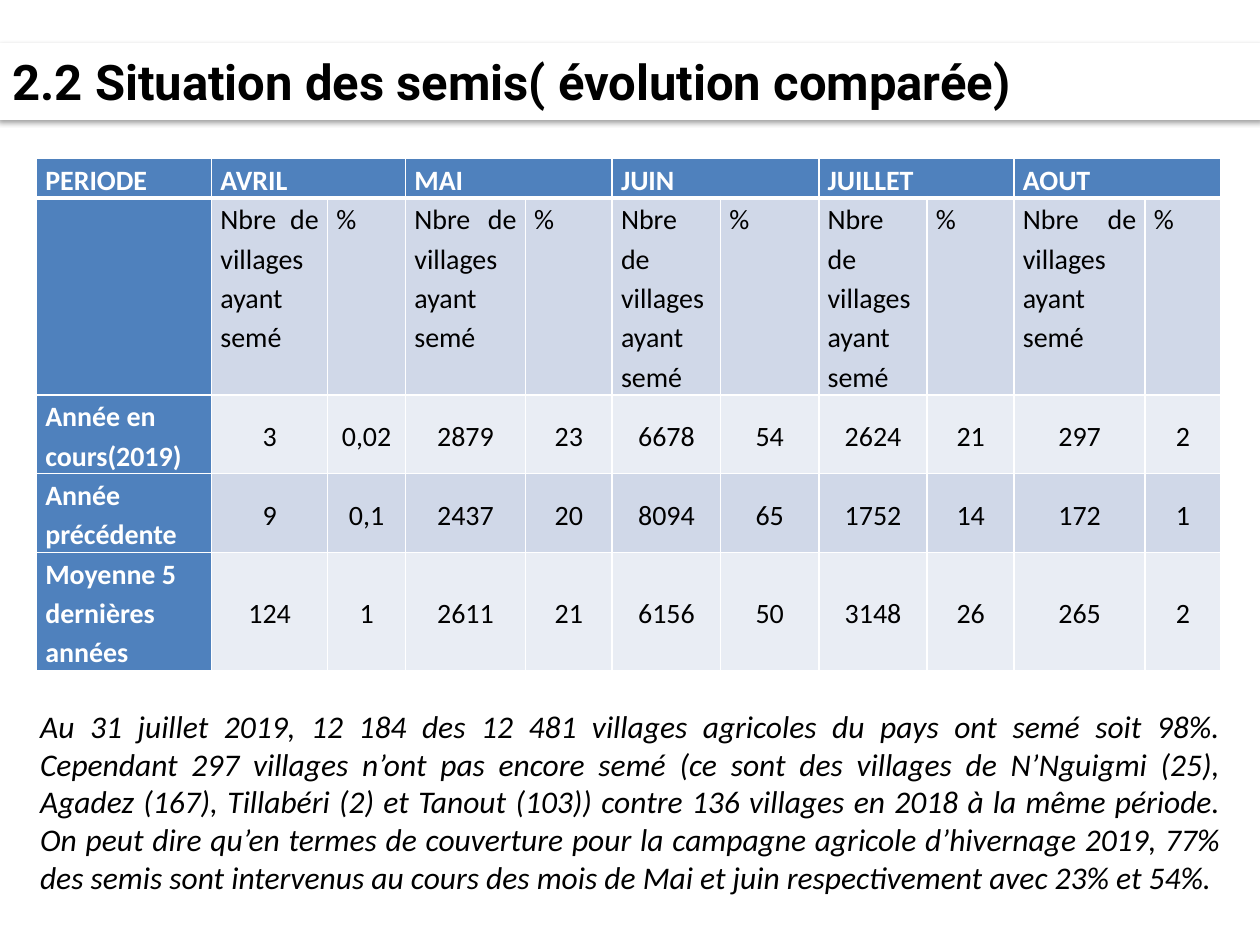
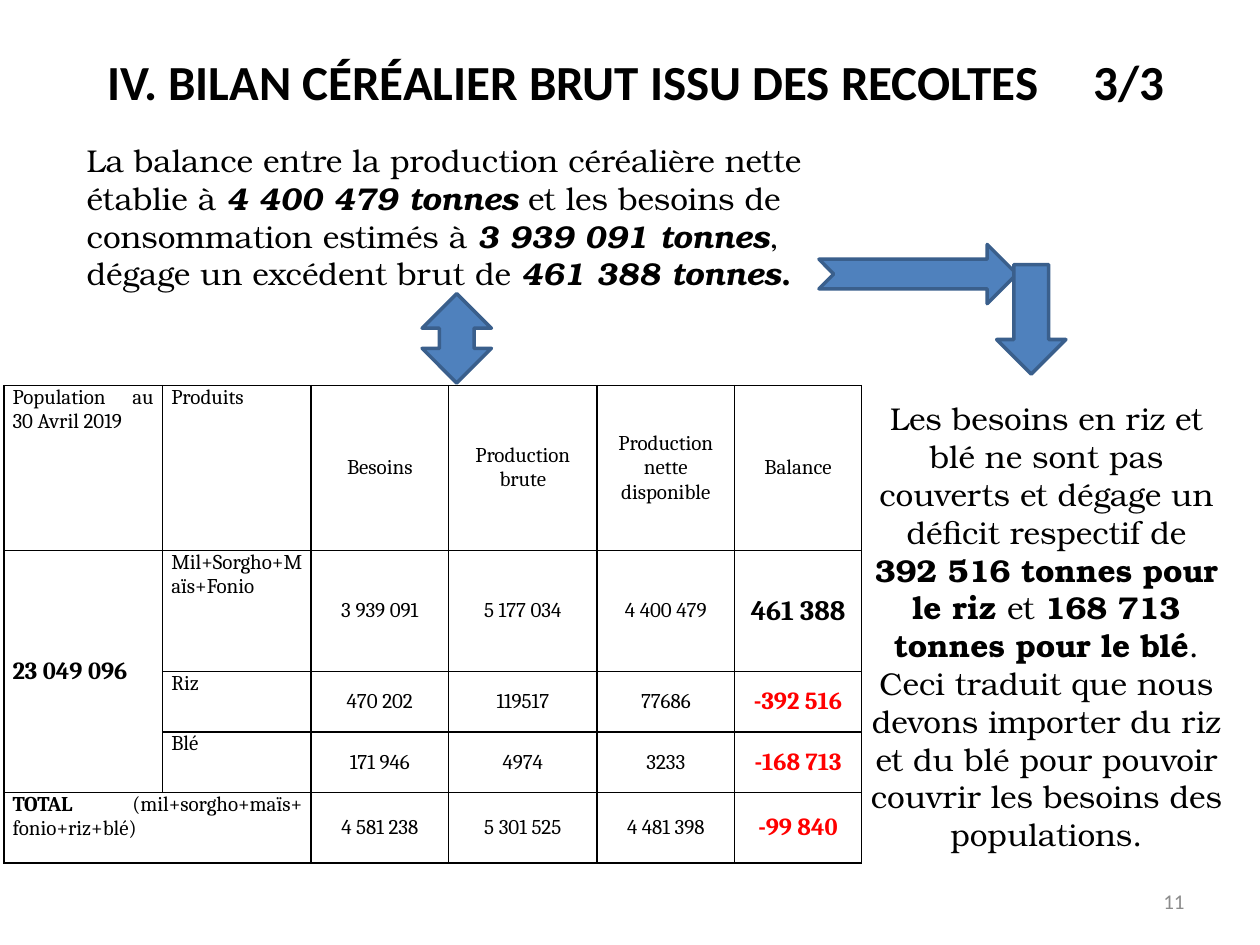
from lxml import etree
from pptx import Presentation
from pptx.dml.color import RGBColor
from pptx.enum import shapes, text
from pptx.oxml import parse_xml
from pptx.oxml.ns import nsdecls, qn
from pptx.util import Inches, Pt

COLORS = {
    "black": "000000", "white": "FFFFFF", "red": "FF0000", "grey": "8C8C8C",
    "blue": "4F81BD", "outline": "3A5F8C", "band": "D0D8E8", "pale": "E9EDF4",
}
LEFT, CENTER = text.PP_ALIGN.LEFT, text.PP_ALIGN.CENTER
JUSTIFY, RIGHT = text.PP_ALIGN.JUSTIFY, text.PP_ALIGN.RIGHT
TOP, MIDDLE = text.MSO_ANCHOR.TOP, text.MSO_ANCHOR.MIDDLE
SERIF = "TeX Gyre Bonum"


def write(frame, pieces, size, font, color="black", align=LEFT, anchor=TOP):
    """Fill a frame with (text, style) pieces; style holds b for bold, i for italic."""
    frame.word_wrap = True
    frame.vertical_anchor = anchor
    paragraph = frame.paragraphs[0]
    paragraph.alignment = align
    for words, style in pieces:
        run = paragraph.add_run()
        run.text = words
        run.font.size = Pt(size)
        run.font.name = font
        run.font.bold = "b" in style
        run.font.italic = "i" in style
        run.font.color.rgb = RGBColor.from_string(COLORS[color])
    return paragraph


def frame_cell(cell, fill, border, top=1, bottom=1):
    """Set margins, fill (None for clear) and the four borders, widths in points."""
    cell.margin_left = cell.margin_right = Inches(0.07)
    cell.margin_top = cell.margin_bottom = 0
    if fill:
        cell.fill.solid()
        cell.fill.fore_color.rgb = RGBColor.from_string(COLORS[fill])
    else:
        cell.fill.background()
    properties = cell._tc.get_or_add_tcPr()
    sides = (("lnL", 1), ("lnR", 1), ("lnT", top), ("lnB", bottom))
    for place, (side, width) in enumerate(sides):
        properties.insert(place, parse_xml(
            f'<a:{side} {nsdecls("a")} w="{Pt(width)}"><a:solidFill>'
            f'<a:srgbClr val="{COLORS[border]}"/></a:solidFill></a:{side}>'))


prs = Presentation()
prs.slide_width, prs.slide_height = Inches(10), Inches(7.5)
prs.element.set("firstSlideNum", "10")

# What the slides share: a bold 28-point title and a table laid on a grid
content = [
    dict(title="2.2 Situation des semis( évolution comparée)", font="Roboto",
         title_at=(0, 0.36, 10, 0.57), table_at=(0.29, 1.26),
         columns=[1.39, 0.92, 0.62, 0.95, 0.69, 0.86, 0.78, 0.86, 0.69, 1.04, 0.6],
         rows=[0.3, 1.48, 0.59, 0.59, 0.89]),
    dict(title="IV. BILAN CÉRÉALIER BRUT ISSU DES RECOLTES\t3/3", font="Calibri",
         title_at=(0.75, 0.36, 9, 0.56), table_at=(0.03, 3.06),
         columns=[1.26, 1.18, 1.09, 1.18, 1.09, 1.01],
         rows=[1.31, 0.96, 0.48, 0.48, 0.56]),
]
slides, titles, tables = [], [], []
for page in content:
    slide = prs.slides.add_slide(prs.slide_layouts[5])
    title = slide.shapes.title
    title.left, title.top, title.width, title.height = map(Inches, page["title_at"])
    title.text_frame.auto_size = text.MSO_AUTO_SIZE.NONE
    write(title.text_frame, [(page["title"], "b")], 28, page["font"], anchor=MIDDLE)
    table = slide.shapes.add_table(
        len(page["rows"]), len(page["columns"]), *map(Inches, page["table_at"]),
        Inches(sum(page["columns"])), Inches(sum(page["rows"]))).table
    for column, width in zip(table.columns, page["columns"]):
        column.width = Inches(width)
    for row, height in zip(table.rows, page["rows"]):
        row.height = Inches(height)
    slides.append(slide)
    titles.append(title)
    tables.append(table)
sowing_slide, balance_slide = slides
sowing_title, balance_title = titles
sowing, balance = tables

# Slide 1: title band with a soft shadow below
sowing_title.fill.solid()
sowing_title.fill.fore_color.rgb = RGBColor.from_string(COLORS["white"])
sowing_title.line.color.rgb = RGBColor.from_string(COLORS["white"])
sowing_title.line.width = Pt(3)
sowing_title._element.spPr.append(parse_xml(
    f'<a:effectLst {nsdecls("a")}><a:outerShdw blurRad="{Pt(3.1)}" dist="{Pt(1.6)}" '
    f'dir="5400000" rotWithShape="0"><a:srgbClr val="{COLORS["black"]}">'
    '<a:alpha val="38000"/></a:srgbClr></a:outerShdw></a:effectLst>'))

# Slide 1: sowing by month
months = ["AVRIL", "MAI", "JUIN", "JUILLET", "AOUT"]
sowing_rows = [
    ["PERIODE"] + [label for month in months for label in (month, "")],
    [""] + ["Nbre de villages ayant semé", "%"] * len(months),
    ["Année en cours(2019)", "3", "0,02", "2879", "23", "6678", "54", "2624", "21", "297", "2"],
    ["Année précédente", "9", "0,1", "2437", "20", "8094", "65", "1752", "14", "172", "1"],
    ["Moyenne 5 dernières années", "124", "1", "2611", "21", "6156", "50", "3148", "26",
     "265", "2"],
]
for r, values in enumerate(sowing_rows):
    for c, value in enumerate(values):
        heading = r == 0 or c == 0
        fill = "blue" if heading else "band" if r % 2 else "pale"
        cell = sowing.cell(r, c)
        frame_cell(cell, fill, "white", top=3 if r == 1 else 1, bottom=3 if r == 0 else 1)
        align = JUSTIFY if r < 2 else LEFT if c == 0 else CENTER
        paragraph = write(cell.text_frame, [(value, "b" if heading else "")], 16, "Calibri",
                          "white" if heading else "black", align)
        paragraph.line_spacing = 1.15
        cell.vertical_anchor = TOP if r < 2 else MIDDLE
for c in range(1, len(sowing.columns), 2):
    sowing.cell(0, c).merge(sowing.cell(0, c + 1))

# Slide 2: title with the part number at a tab stop
tab_list = etree.SubElement(
    balance_title.text_frame.paragraphs[0]._p.get_or_add_pPr(), qn("a:tabLst"))
etree.SubElement(tab_list, qn("a:tab"), pos=str(Inches(7.83)), algn="l")

# Slide 2: cereal balance
balance_rows = [
    ["Population au 30 Avril 2019", "Produits", "Besoins", "Production brute",
     "Production nette disponible", "Balance"],
    ["23 049 096", "Mil+Sorgho+Maïs+Fonio", "3 939 091", "5 177 034", "4 400 479", "461 388"],
    ["", "Riz", "470 202", "119517", "77686", "-392 516"],
    ["", "Blé", "171 946", "4974", "3233", "-168 713"],
    ["TOTAL ", "", "4 581 238", "5 301 525", "4 481 398", "-99 840"],
]
for r, values in enumerate(balance_rows):
    for c, value in enumerate(values):
        cell = balance.cell(r, c)
        frame_cell(cell, None, "black")
        deficit = value.startswith("-")
        population = (r, c) == (1, 0)
        surplus = (r, c) == (1, 5)
        total = (r, c) == (4, 0)
        pieces = [(value, "b" if deficit or population or surplus or total else "")]
        if total:
            pieces.append(("(mil+sorgho+maïs+ fonio+riz+blé)", ""))
        size = 16 if surplus else 14 if deficit or population else 12
        align = LEFT if population else JUSTIFY if c < 2 else CENTER
        write(cell.text_frame, pieces, size, "Cambria", "red" if deficit else "black", align)
        cell.vertical_anchor = MIDDLE if c > 1 or population else TOP
balance.cell(1, 0).merge(balance.cell(3, 0))
balance.cell(4, 0).merge(balance.cell(4, 1))

# Commentary around the tables
comments = [
    (sowing_slide, (0.22, 5.56, 9.57, 1.62), "Calibri", JUSTIFY, TOP, [
        ("Au 31 juillet 2019, 12 184 des 12 481 villages agricoles du pays ont semé soit 98%. "
         "Cependant 297 villages n’ont pas encore semé (ce sont des villages de N’Nguigmi (25), "
         "Agadez (167), Tillabéri (2) et Tanout (103)) contre 136 villages en 2018 à la même "
         "période. On peut dire qu’en termes de couverture pour la campagne agricole "
         "d’hivernage 2019, 77% des semis sont intervenus au cours des mois de Mai et juin "
         "respectivement avec 23% et 54%.", "i")]),
    (balance_slide, (0.59, 1.07, 6.3, 1.31), SERIF, LEFT, TOP, [
        ("La balance entre la production céréalière nette établie à ", ""),
        ("4 400 479 tonnes", "bi"),
        (" et les besoins de consommation estimés à ", ""),
        ("3 939 091 tonnes", "bi"),
        (", dégage un excédent brut de ", ""),
        ("461 388 tonnes", "bi"),
        (".", "b")]),
    (balance_slide, (6.81, 3.1, 2.99, 3.74), SERIF, CENTER, MIDDLE, [
        ("Les besoins en riz et blé ne sont pas couverts et dégage un déficit respectif de ", ""),
        ("392 516 tonnes pour le riz ", "b"),
        ("et ", ""),
        ("168 713 tonnes pour le blé", "b"),
        (". Ceci traduit que nous devons importer du riz et du blé pour pouvoir couvrir "
         "les besoins des populations.", "")]),
]
for slide, place, font, align, anchor, pieces in comments:
    box = slide.shapes.add_textbox(*map(Inches, place))
    write(box.text_frame, pieces, 18, font, align=align, anchor=anchor)

# Arrows from the balance text to the table and to the deficit comment
arrows = [
    (shapes.MSO_SHAPE.NOTCHED_RIGHT_ARROW, (6.5, 1.94, 1.57, 0.47)),
    (shapes.MSO_SHAPE.DOWN_ARROW, (7.91, 2.1, 0.55, 0.87)),
    (shapes.MSO_SHAPE.UP_DOWN_ARROW, (3.35, 2.33, 0.55, 0.71)),
]
for kind, place in arrows:
    arrow = balance_slide.shapes.add_shape(kind, *map(Inches, place))
    arrow.shadow.inherit = False
    arrow.fill.solid()
    arrow.fill.fore_color.rgb = RGBColor.from_string(COLORS["blue"])
    arrow.line.color.rgb = RGBColor.from_string(COLORS["outline"])
    arrow.line.width = Pt(2)

# Page number as a live field
page_box = balance_slide.shapes.add_textbox(*map(Inches, (7.17, 6.95, 2.33, 0.4)))
number = write(page_box.text_frame, [("11", "")], 12, "Calibri", "grey", RIGHT, MIDDLE)
number_run = number.runs[0]._r
number_run.tag = qn("a:fld")
number_run.set("id", "{B6F15528-21DE-4FAA-801E-634DDDAF4B2B}")
number_run.set("type", "slidenum")

prs.save("out.pptx")
